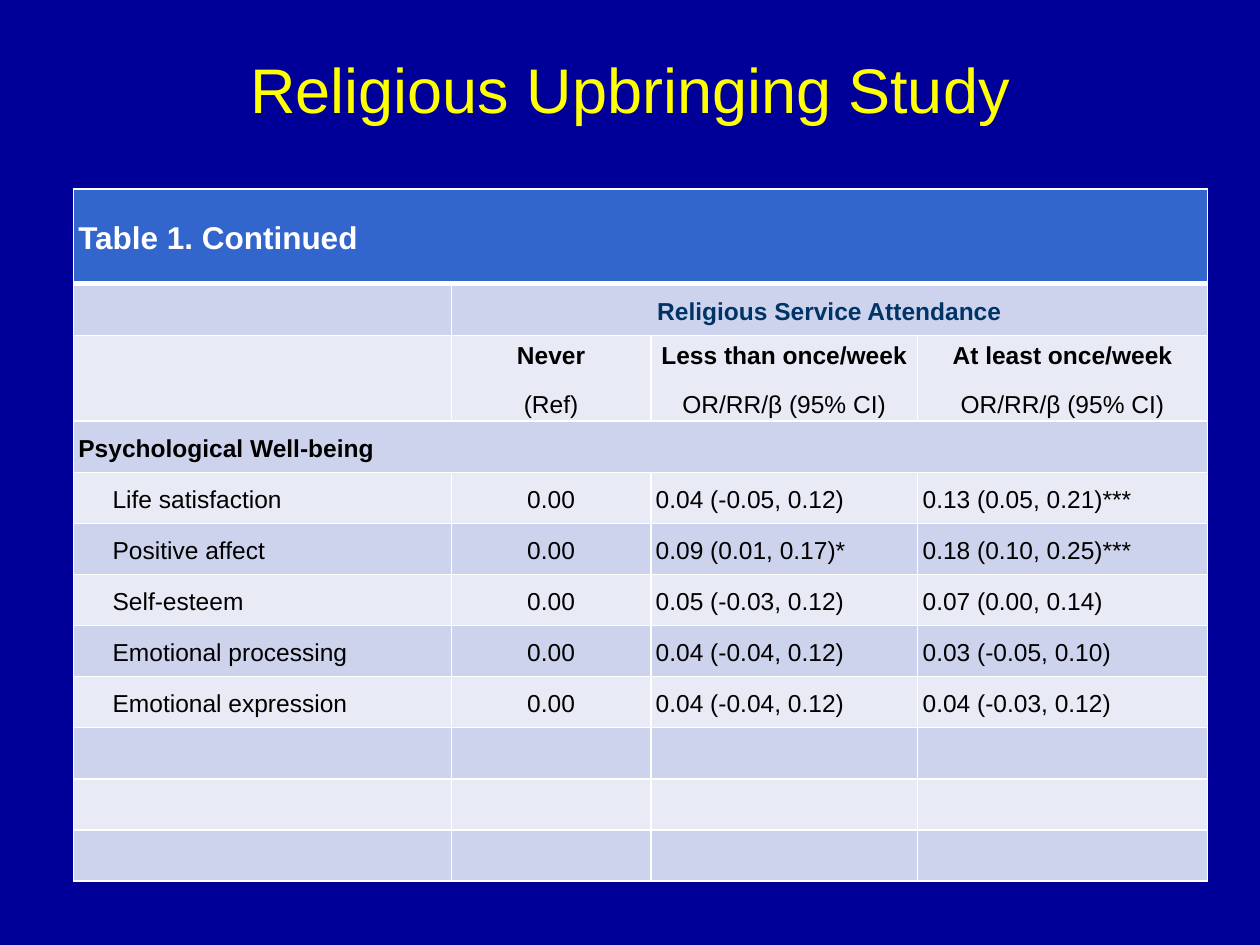
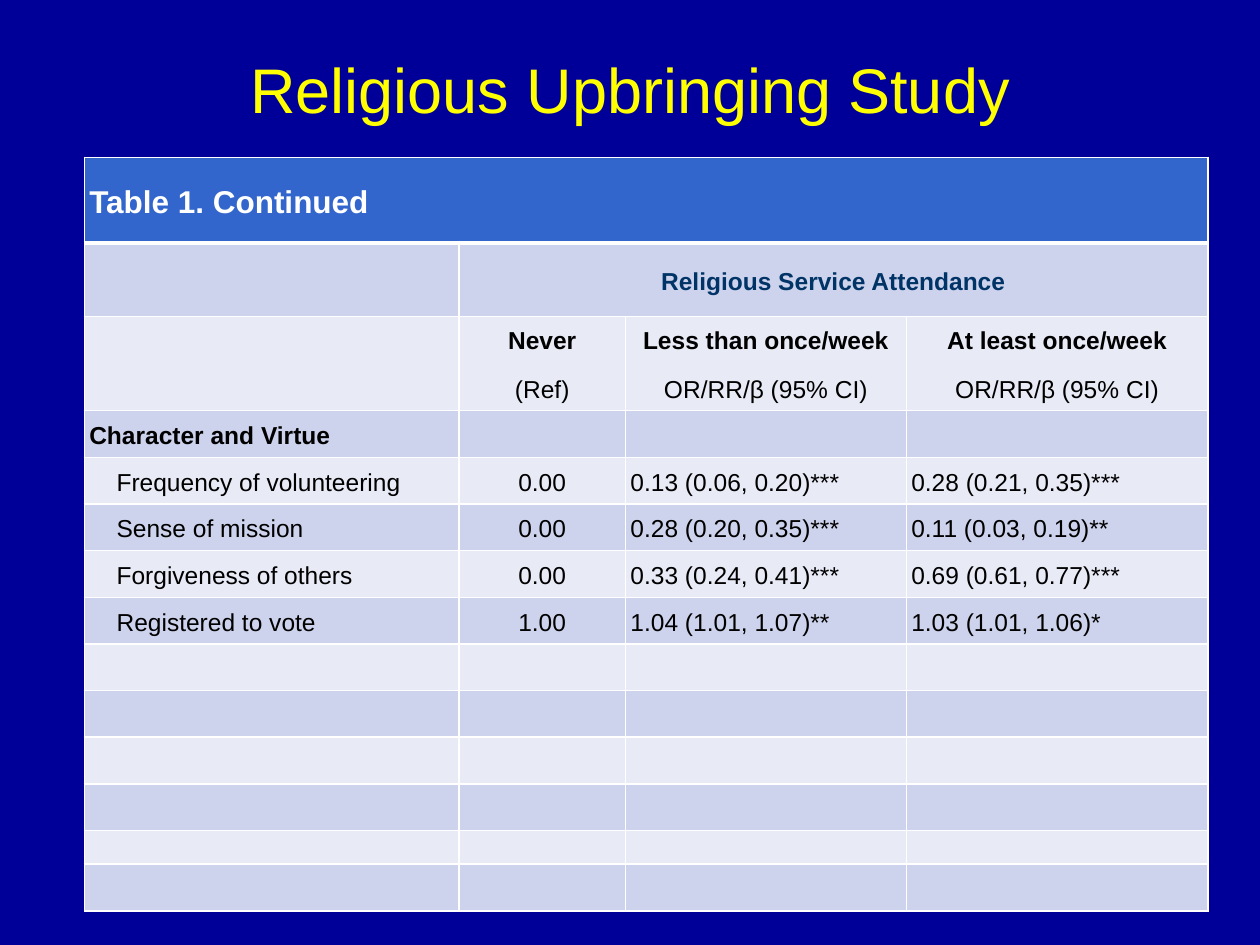
from lxml import etree
from pptx import Presentation
from pptx.dml.color import RGBColor
from pptx.enum import text
from pptx.oxml.ns import qn
from pptx.util import Cm, Pt

NAVY = RGBColor(0x00, 0x00, 0x99)
YELLOW = RGBColor(0xFF, 0xFF, 0x00)
WHITE = RGBColor(0xFF, 0xFF, 0xFF)
BLACK = RGBColor(0x00, 0x00, 0x00)
BLUE = RGBColor(0x33, 0x66, 0xCC)
DARK_BLUE = RGBColor(0x00, 0x33, 0x66)
DARK_BAND = RGBColor(0xCD, 0xD3, 0xEC)
LIGHT_BAND = RGBColor(0xE8, 0xEA, 0xF6)

FONT = "Arial"
LEFT, CENTER = text.PP_ALIGN.LEFT, text.PP_ALIGN.CENTER
TITLE = "Religious Upbringing Study"
CAPTION = "Table 1. Continued"
ATTENDANCE = "Religious Service Attendance"
GROUPS = [
    ("Never", "(Ref)"),
    ("Less than once/week", "OR/RR/β (95% CI)"),
    ("At least once/week", "OR/RR/β (95% CI)"),
]

WELL_BEING = [
    ("Life satisfaction", "0.00", "0.04 (-0.05, 0.12)", "0.13 (0.05, 0.21)***"),
    ("Positive affect", "0.00", "0.09 (0.01, 0.17)*", "0.18 (0.10, 0.25)***"),
    ("Self-esteem", "0.00", "0.05 (-0.03, 0.12)", "0.07 (0.00, 0.14)"),
    ("Emotional processing", "0.00", "0.04 (-0.04, 0.12)", "0.03 (-0.05, 0.10)"),
    ("Emotional expression", "0.00", "0.04 (-0.04, 0.12)", "0.04 (-0.03, 0.12)"),
]
VIRTUE = [
    ("Frequency of volunteering", "0.00", "0.13 (0.06, 0.20)***", "0.28 (0.21, 0.35)***"),
    ("Sense of mission", "0.00", "0.28 (0.20, 0.35)***", "0.11 (0.03, 0.19)**"),
    ("Forgiveness of others", "0.00", "0.33 (0.24, 0.41)***", "0.69 (0.61, 0.77)***"),
    ("Registered to vote", "1.00", "1.04 (1.01, 1.07)**", "1.03 (1.01, 1.06)*"),
]


def write(p, words, *, size=14, color=BLACK, bold=False, align=LEFT,
          spacing=None, before=0, after=0, indent=0):
    p.alignment = align
    p.line_spacing = spacing
    p.space_before, p.space_after = Pt(before), Pt(after)
    if indent:
        p._p.get_or_add_pPr().set("marL", str(Cm(indent)))
    r = p.add_run()
    r.text = words
    r.font.name, r.font.size, r.font.bold = FONT, Pt(size), bold
    r.font.color.rgb = color


def set_borders(cell, top=1, bottom=1):
    """Draw white lines round a cell, with widths in points."""
    tc_pr = cell._tc.get_or_add_tcPr()
    for side, width in (("L", 1), ("R", 1), ("T", top), ("B", bottom)):
        ln = etree.SubElement(tc_pr, qn(f"a:ln{side}"), w=str(Pt(width)))
        fill = etree.SubElement(ln, qn("a:solidFill"))
        etree.SubElement(fill, qn("a:srgbClr"), val=str(WHITE))


class Deck:
    def __init__(self):
        self.prs = Presentation()
        self.prs.slide_width, self.prs.slide_height = Cm(25.4), Cm(19.05)
        fill = self.prs.slide_master.background.fill
        fill.solid()
        fill.fore_color.rgb = NAVY
        self.s = None

    def add_slide(self):
        self.s = self.prs.slides.add_slide(self.prs.slide_layouts[5])

    def title(self, words):
        sp = self.s.shapes.title
        sp.left, sp.top, sp.width, sp.height = Cm(1.27), Cm(0.2), Cm(22.86), Cm(3.18)
        tf = sp.text_frame
        tf.vertical_anchor = text.MSO_ANCHOR.MIDDLE
        write(tf.paragraphs[0], words, size=36, color=YELLOW, align=CENTER)

    def grid(self, left, top, widths, heights):
        """Add an empty banded table, with lengths in centimetres."""
        table = self.s.shapes.add_table(
            len(heights), len(widths), Cm(left), Cm(top),
            Cm(sum(widths)), Cm(sum(heights))).table
        for column, width in zip(table.columns, widths):
            column.width = Cm(width)
        for i, (row, height) in enumerate(zip(table.rows, heights)):
            row.height = Cm(height)
            for cell in row.cells:
                set_borders(cell, top=3 if i == 1 else 1, bottom=3 if i == 0 else 1)
                cell.fill.solid()
                band = DARK_BAND if i % 2 else LIGHT_BAND
                cell.fill.fore_color.rgb = band if i else BLUE
                cell.margin_left = cell.margin_right = Cm(0.1)
                cell.margin_top = cell.margin_bottom = 0
                cell.vertical_anchor = text.MSO_ANCHOR.MIDDLE
                end = etree.SubElement(cell.text_frame.paragraphs[0]._p, qn("a:endParaRPr"))
                end.set("sz", "1000")
        return table

    def cell(self, table, row, col, *lines, bold_first=False, **style):
        tf = table.cell(row, col).text_frame
        for i, line in enumerate(lines):
            p = tf.add_paragraph() if i else tf.paragraphs[0]
            write(p, line, bold=bold_first and i == 0, spacing=1.15, **style)

    def results(self, left, top, widths, heights, section, records, indent, wide_section=False):
        """Add the results table: caption, attendance groups, section and records."""
        table = self.grid(left, top, widths, heights)
        last = len(widths) - 1
        table.cell(0, 0).merge(table.cell(0, last))
        table.cell(1, 1).merge(table.cell(1, last))
        if wide_section:
            table.cell(3, 0).merge(table.cell(3, last))

        self.cell(table, 0, 0, CAPTION, bold_first=True, size=18, color=WHITE,
                  before=3, after=3)
        self.cell(table, 1, 1, ATTENDANCE, bold_first=True, color=DARK_BLUE,
                  align=CENTER, after=10)
        for col, lines in enumerate(GROUPS, 1):
            self.cell(table, 2, col, *lines, bold_first=True, align=CENTER, after=10)
        self.cell(table, 3, 0, section, bold_first=True, before=3, after=3)
        for row, record in enumerate(records, 4):
            for col, value in enumerate(record):
                self.cell(table, row, col, value, align=CENTER if col == 1 else LEFT,
                          indent=0 if col else indent)


def main():
    deck = Deck()

    deck.add_slide()
    deck.title(TITLE)
    deck.results(1.48, 3.81, [7.62, 4.02, 5.38, 5.84], [1.91, 1.04, 1.73] + [1.03] * 9,
                 "Psychological Well-being", WELL_BEING, indent=0.69, wide_section=True)

    deck.add_slide()
    deck.title(TITLE)
    deck.results(1.7, 3.17, [7.55, 3.36, 5.66, 6.08],
                 [1.73, 1.48, 1.9] + [0.94] * 9 + [0.68, 0.94],
                 "Character and Virtue", VIRTUE, indent=0.55)

    deck.prs.save("out.pptx")


if __name__ == "__main__":
    main()
